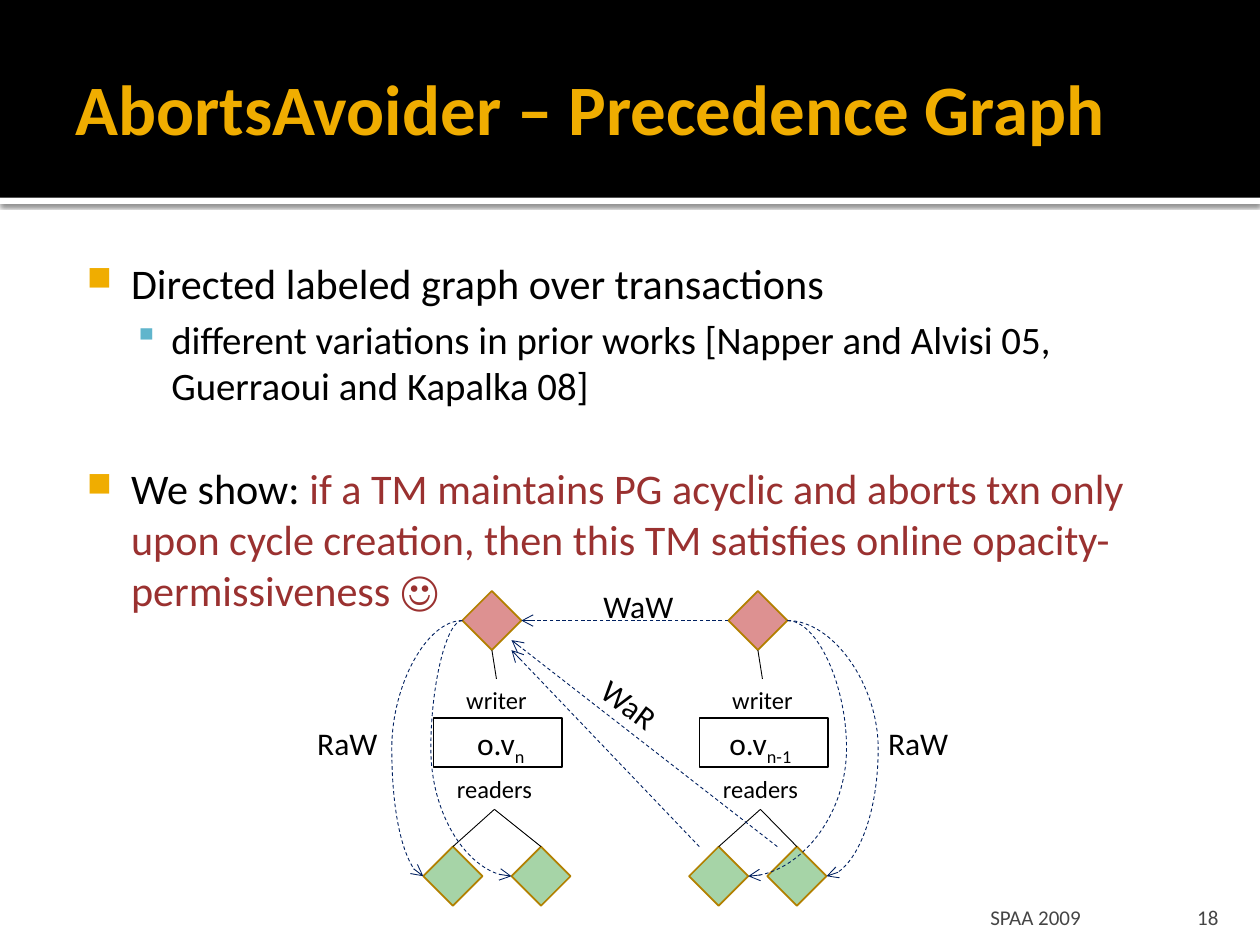
from lxml.etree import SubElement as Sub
from pptx import Presentation
from pptx.dml.color import RGBColor as RGB
from pptx.enum.dml import MSO_LINE as Dash
from pptx.enum.shapes import MSO_CONNECTOR as Con, MSO_SHAPE as Geo
from pptx.enum.text import MSO_ANCHOR as Anchor, MSO_AUTO_SIZE as Auto, PP_ALIGN as Align
from pptx.oxml.ns import qn
from pptx.util import Pt

BLACK, WHITE, GOLD, TEAL = "000000", "FFFFFF", "F0AD00", "60B5CC"
RED, NAVY, GREY = "9A3130", "002060", "454545"
PINK, GREEN, RIM = "DD9191", "A6D4A7", "B28000"
SIDE, STEP = 33.8, 152
TOP, LOW = 337.7, 483.8
MID, BASE = TOP + SIDE / 2, LOW + SIDE / 2


def tint(part, code):
    part.rgb = RGB.from_string(code)


def style(run, size, code=BLACK, bold=False):
    font = run.font
    font.name, font.size, font.bold = "Calibri", Pt(size), bold
    tint(font.color, code)


def inset(frame, left, top, right, low):
    frame.margin_left, frame.margin_top = Pt(left), Pt(top)
    frame.margin_right, frame.margin_bottom = Pt(right), Pt(low)


def shape(slide, geo, x, y, w, h, fill=None, line=None):
    item = slide.shapes.add_shape(geo, Pt(x), Pt(y), Pt(w), Pt(h))
    item.shadow.inherit = False
    if fill:
        item.fill.solid()
        tint(item.fill.fore_color, fill)
    else:
        item.fill.background()
    if line:
        tint(item.line.color, line)
        item.line.width = Pt(1)
    else:
        item.line.fill.background()
    return item


def gem(slide, x, y, fill):
    return shape(slide, Geo.DIAMOND, x, y, SIDE, SIDE, fill, RIM)


def label(slide, text, x, y, w, h, size=18, align=Align.CENTER, sub="", wrap=False):
    box = slide.shapes.add_textbox(Pt(x), Pt(y), Pt(w), Pt(h))
    frame = box.text_frame
    frame.word_wrap, frame.auto_size = wrap, Auto.SHAPE_TO_FIT_TEXT
    para = frame.paragraphs[0]
    para.text, para.alignment = text, align
    style(para.runs[0], size)
    if sub:
        run = para.add_run()
        run.text = sub
        style(run, size)
        run._r.get_or_add_rPr().set("baseline", "-25000")
    return box


def link(slide, x1, y1, x2, y2, kind=Con.STRAIGHT, code=BLACK):
    line = slide.shapes.add_connector(kind, Pt(x1), Pt(y1), Pt(x2), Pt(y2))
    tint(line.line.color, code)
    line.line.width = Pt(0.5)
    Sub(line.element.spPr, qn("a:effectLst"))
    return line


def join(slide, start, site, end, stop):
    line = link(slide, 0, 0, 1, 1)
    line.begin_connect(start, site)
    line.end_connect(end, stop)


def arrow(slide, x1, y1, x2, y2, bend=None):
    kind = Con.STRAIGHT if bend is None else Con.CURVE
    line = link(slide, x1, y1, x2, y2, kind, NAVY)
    line.line.dash_style = Dash.DASH
    props = line.element.spPr
    Sub(props.find(qn("a:ln")), qn("a:tailEnd"), type="arrow")
    if bend is not None:
        ratio = round((bend - x1) / (x2 - x1) * 100000)
        guides = props.find(qn("a:prstGeom")).find(qn("a:avLst"))
        Sub(guides, qn("a:gd"), name="adj1", fmla=f"val {ratio}")


def bullet(para, parts, size, left, hang, mark, code, scale, level=0, gap=0):
    para.level, para.space_before = level, Pt(gap)
    for text, shade in parts:
        run = para.add_run()
        run.text = text
        style(run, size, shade)
    props = para._p.get_or_add_pPr()
    props.set("marL", str(Pt(left)))
    props.set("indent", str(Pt(-hang)))
    Sub(Sub(props, qn("a:buClr")), qn("a:srgbClr"), val=code)
    Sub(props, qn("a:buSzPct"), val=str(scale * 1000))
    Sub(props, qn("a:buChar"), char=mark)


def header(slide):
    strip = shape(slide, Geo.RECTANGLE, 0, 113, 720, 3.6, WHITE)
    glow = strip.element.spPr.find(qn("a:effectLst"))
    shade = Sub(glow, qn("a:outerShdw"), blurRad=str(Pt(2.5)), dist=str(Pt(0.8)),
                dir="5400000", algn="t", rotWithShape="0")
    Sub(Sub(shade, qn("a:srgbClr"), val=BLACK), qn("a:alpha"), val="60000")
    band = shape(slide, Geo.RECTANGLE, 0, 0, 720, 113, BLACK)
    title = slide.shapes.title
    for item in (band, strip):
        title.element.addprevious(item.element)
    strip.element.addnext(band.element)
    title.left, title.top, title.width, title.height = Pt(36), Pt(12.2), Pt(648), Pt(98.6)
    frame = title.text_frame
    frame.text = "AbortsAvoider – Precedence Graph"
    frame.vertical_anchor = Anchor.MIDDLE
    inset(frame, 7.2, 3.6, 3.6, 3.6)
    para = frame.paragraphs[0]
    para.alignment = Align.LEFT
    style(para.runs[0], 40.5, GOLD, True)


def body(slide):
    frame = slide.shapes.add_textbox(Pt(36), Pt(139.7), Pt(648), Pt(192.2)).text_frame
    frame.word_wrap = True
    inset(frame, 4.3, 7.2, 7.2, 3.6)
    main = (24.1, 34.6, 25.2, "■", GOLD, 80)
    bullet(frame.paragraphs[0], [("Directed labeled graph over transactions", BLACK)], *main)
    bullet(frame.add_paragraph(),
           [("different variations in prior works [Napper and Alvisi 05, "
             "Guerraoui and Kapalka 08]", BLACK)],
           22.2, 57.6, 21.6, "▪", TEAL, 90, level=1, gap=4.4)
    bullet(frame.add_paragraph(),
           [("We show: ", BLACK),
            ("if a TM maintains PG acyclic and aborts txn only upon cycle creation, "
             "then this TM satisfies online opacity-permissiveness ☺", RED)],
           *main, gap=31)


def version(slide, shift, sub, spot, wide, wrap, reads):
    shape(slide, Geo.RECTANGLE, 247.7 + shift, 410.4, 73.4, 28.1, line=BLACK)
    label(slide, "o.v", spot, 410.4, wide, 29, sub=sub, wrap=wrap)
    writer = label(slide, "writer", 259.2 + shift, 388, 49, 24, 14)
    reader = label(slide, "readers", 253.4 + shift, 438.5, 58.3, 24, 14)
    join(slide, writer, 0, gem(slide, 264.2 + shift, TOP, PINK), 2)
    for x in reads:
        join(slide, reader, 2, gem(slide, x, LOW, GREEN), 0)


def edges(slide):
    left, right = 264.2, 416.2 + SIDE
    for x1, x2, bend in ((right, 472.3, 501.8), (right, 427.6, 483.8),
                         (left, 292.3, 246.2), (left, 241.9, 223.9)):
        arrow(slide, x1, MID, x2, BASE, bend)
    arrow(slide, 416.2, MID, left + SIDE, MID, 357.1)
    arrow(slide, 444.2, LOW, 292.3, 365.8)
    arrow(slide, 399.6, LOW, 292.3, 371.5)
    for text, x, y, w, turn in (("WaW", 337.7, 331.9, 55.4, 0), ("RaW", 500.4, 410.4, 50.4, 0),
                                ("RaW", 174.2, 410.4, 50.4, 0), ("WaR", 335.5, 388.8, 50.4, 36.9)):
        label(slide, text, x, y, w, 29, align=Align.LEFT).rotation = turn


def footer(slide, text, x, w, side, align):
    box = label(slide, text, x, 509.8, w, 21.6, 12, align, wrap=True)
    frame = box.text_frame
    frame.auto_size, frame.vertical_anchor = Auto.NONE, Anchor.BOTTOM
    inset(frame, side, 3.6, side, 0)
    tint(frame.paragraphs[0].runs[0].font.color, GREY)


def main():
    deck = Presentation()
    deck.slide_width, deck.slide_height = Pt(720), Pt(540)
    slide = deck.slides.add_slide(deck.slide_layouts[5])
    header(slide)
    body(slide)
    version(slide, 0, "n", 264.2, 43.9, False, (241.9, 292.3))
    version(slide, STEP, "n-1", 399.6, 69.8, True, (438.5, 393.8))
    edges(slide)
    footer(slide, "18", 645.8, 57.6, 7.2, Align.RIGHT)
    footer(slide, "SPAA 2009", 562.3, 79.2, 3.6, Align.LEFT)
    deck.save("out.pptx")


if __name__ == "__main__":
    main()
